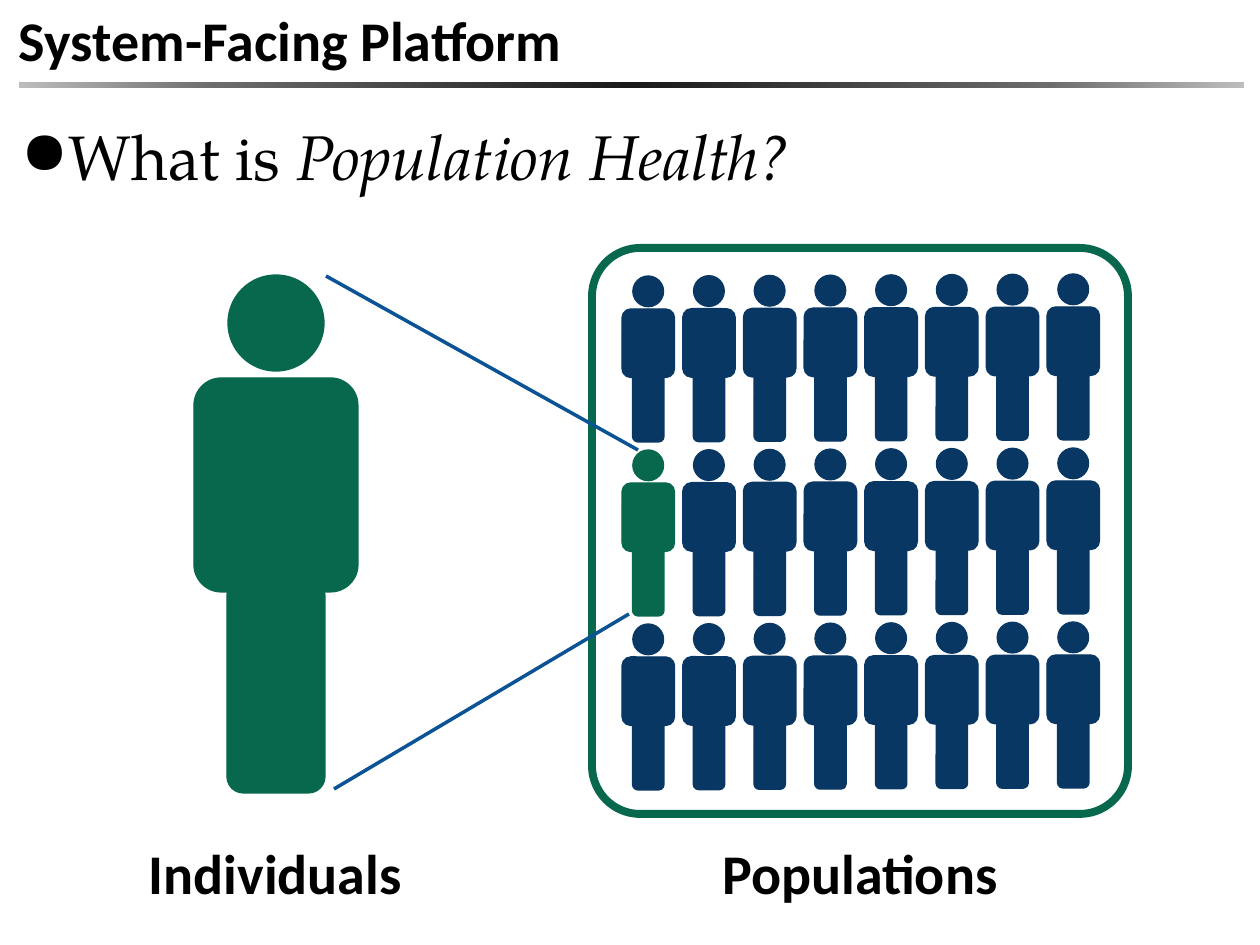
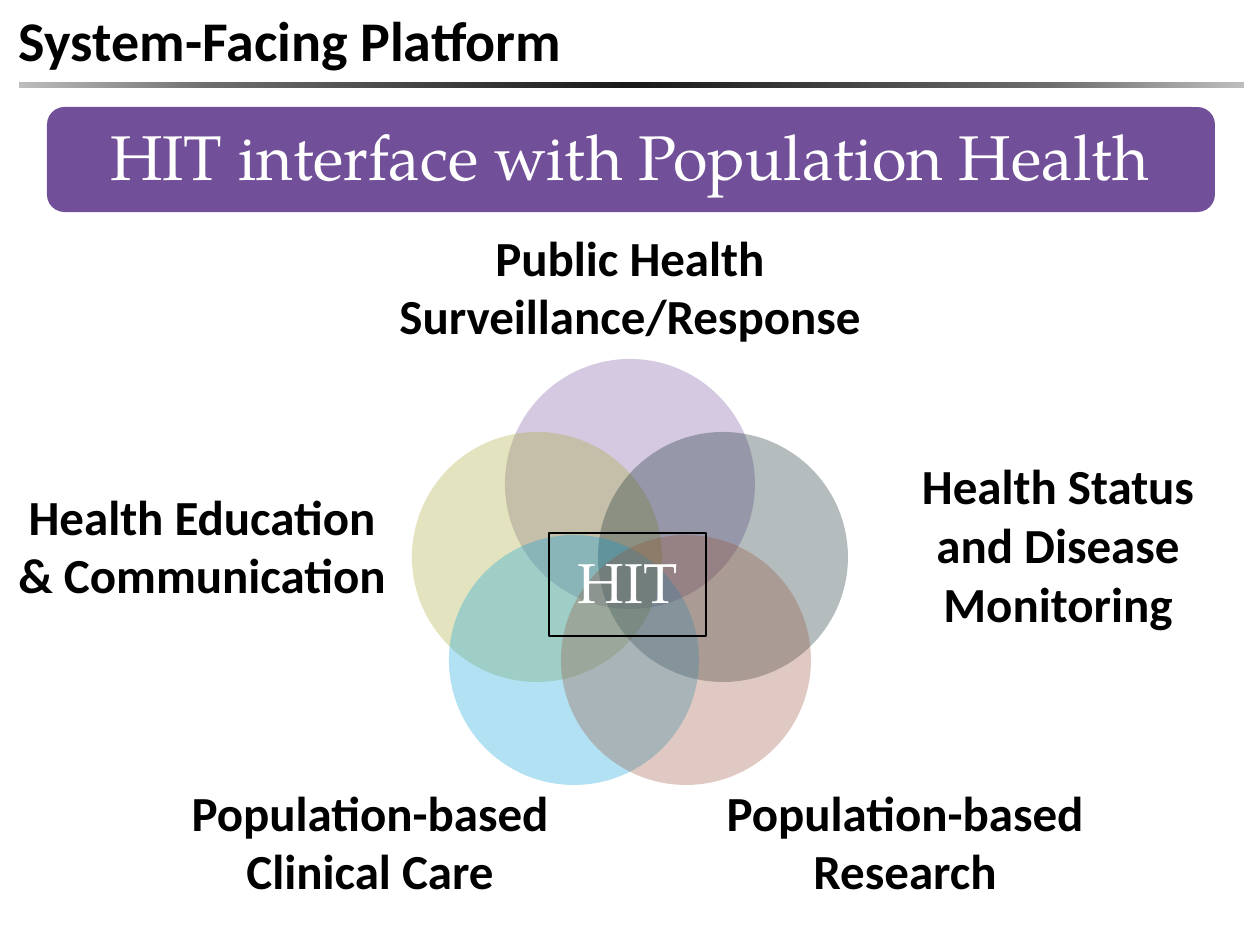
import pptx
import pptx.dml.color
import pptx.enum.shapes
import pptx.enum.text
import pptx.oxml
import pptx.oxml.ns
import pptx.util

PX = 914400 / 126
SLIDE_W, SLIDE_H = 1260, 945
SANS, SERIF = "Calibri", "TeX Gyre Pagella"
BLACK, WHITE = "000000", "FFFFFF"
GREEN, NAVY, BLUE, PURPLE = "08684E", "083763", "0B5394", "724F99"
BODY_TOP, BODY_H = 112, 728
TITLE_RULE = [(0, "191919"), (68, "6C6C6C"), (100, "BDBDBD")]

SHAPE = pptx.enum.shapes.MSO_SHAPE
ALIGN = pptx.enum.text.PP_ALIGN
ANCHOR = pptx.enum.text.MSO_ANCHOR
NS = pptx.oxml.ns.nsdecls("a")


def emu(px):
    return pptx.util.Emu(round(px * PX))


def rgb(color):
    return pptx.dml.color.RGBColor.from_string(color)


def add_xml(parent, xml):
    """Append one drawing element, given without its namespace, to parent."""
    tag, rest = xml.split(" ", 1)
    parent.append(pptx.oxml.parse_xml(f"{tag} {NS} {rest}"))


def write(tf, lines, size=28, font=SANS, color=BLACK, bold=False, align=ALIGN.CENTER,
          anchor=ANCHOR.TOP, wrap=True, insets=(13, 6, 13, 6), before=0, bullet=None):
    """Write one paragraph per line; words between asterisks are italic."""
    tf.word_wrap = wrap
    tf.vertical_anchor = anchor
    tf.margin_left, tf.margin_top, tf.margin_right, tf.margin_bottom = map(emu, insets)
    for i, line in enumerate(lines):
        p = tf.add_paragraph() if i else tf.paragraphs[0]
        p.alignment = align
        pPr = p._p.get_or_add_pPr()
        if before:
            add_xml(pPr, f'<a:spcBef ><a:spcPct val="{before * 1000}"/></a:spcBef>')
        if bullet:
            pPr.set("marL", str(emu(38)))
            pPr.set("indent", str(emu(-38)))
            add_xml(pPr, '<a:buSzPct val="95000"/>')
            add_xml(pPr, f'<a:buChar char="{bullet}"/>')
        for j, part in enumerate(line.split("*")):
            if part:
                r = p.add_run()
                r.text = part
                r.font.size = pptx.util.Pt(size)
                r.font.name = font
                r.font.bold = bold
                r.font.italic = j % 2 == 1
                r.font.color.rgb = rgb(color)


def add_text(s, box, lines, **fmt):
    tb = s.shapes.add_textbox(*map(emu, box))
    write(tb.text_frame, lines, **fmt)


def add_shape(s, kind, box, fill=None, line=None, width=0.75, alpha=None):
    sp = s.shapes.add_shape(kind, *map(emu, box))
    sp.shadow.inherit = False
    if fill:
        sp.fill.solid()
        sp.fill.fore_color.rgb = rgb(fill)
    else:
        sp.fill.background()
    if alpha:
        clr = sp._element.spPr.find(".//" + pptx.oxml.ns.qn("a:srgbClr"))
        add_xml(clr, f'<a:alpha val="{alpha * 1000}"/>')
    if line:
        sp.line.color.rgb = rgb(line)
        sp.line.width = pptx.util.Pt(width)
    else:
        sp.line.fill.background()
    return sp


def add_line(s, start, end):
    c = s.shapes.add_connector(pptx.enum.shapes.MSO_CONNECTOR.STRAIGHT,
                               *map(emu, start + end))
    c.line.color.rgb = rgb(BLUE)
    c.line.width = pptx.util.Pt(2)
    add_xml(c._element.spPr, "<a:effectLst />")


def add_header(s):
    """Title over a rule that fades from its middle to both ends."""
    sp = add_shape(s, SHAPE.RECTANGLE, (19, 82, 1225, 6), fill=BLACK)
    stops = "".join(f'<a:gs pos="{pos * 1000}"><a:srgbClr val="{c}"/></a:gs>'
                    for pos, c in TITLE_RULE)
    solid = sp._element.spPr.find(pptx.oxml.ns.qn("a:solidFill"))
    solid.getparent().replace(solid, pptx.oxml.parse_xml(
        f'<a:gradFill {NS}><a:gsLst>{stops}</a:gsLst><a:path path="circle">'
        '<a:fillToRect l="50000" t="130000" r="50000" b="-30000"/></a:path></a:gradFill>'))
    add_text(s, (19, -6, 1134, 79), ["System-Facing Platform"], size=32, bold=True,
             align=ALIGN.LEFT, anchor=ANCHOR.BOTTOM, insets=(0, 6, 0, 0))


def add_person(s, left, top, height, color):
    k = height / 518
    for kind, part in ((SHAPE.ROUNDED_RECTANGLE, (0, 103, 164, 214)),
                       (SHAPE.ROUNDED_RECTANGLE, (33, 304, 98, 214)),
                       (SHAPE.OVAL, (34, 0, 96, 96))):
        x, y, w, h = (v * k for v in part)
        add_shape(s, kind, (left + x, top + y, w, h), fill=color, line=color)


def add_caption(s, box, caption):
    add_text(s, box, [caption], size=32, bold=True, wrap=False)


def add_population(s, left, top, width, height):
    panel = add_shape(s, SHAPE.ROUNDED_RECTANGLE, (left, top, width, height),
                      line=GREEN, width=4.5)
    panel.adjustments[0] = 0.09
    cols, rows = 8, 3
    pitch_x, pitch_y, rise = 425 / (cols - 1), 174, 2 / (cols - 1)
    for row in range(rows):
        for col in range(cols):
            color = GREEN if (row, col) == (1, 0) else NAVY
            add_person(s, left + 30 + col * pitch_x,
                       top + 28 + row * pitch_y - col * rise, 166, color)
    add_caption(s, (left + 111, top + 585, 314, 81), "Populations")


def add_individual(s, left, top):
    add_person(s, left, top, 518, GREEN)
    add_caption(s, (left - 62, top + 558, 287, 81), "Individuals")


def build_population_slide(s):
    add_population(s, 592, 248, 536, 566)
    add_line(s, (334, 789), (629, 614))
    add_line(s, (326, 276), (638, 450))
    add_individual(s, 194, 275)
    add_text(s, (8, BODY_TOP, 1134, BODY_H), ["What is *Population Health?*"],
             size=36, font=SERIF, align=ALIGN.LEFT, before=20, bullet="●")
    add_header(s)


def add_venn(s, cx, cy):
    """Five overlapping circles around a framed word at (cx, cy)."""
    d = 250
    for dx, dy, color in ((0, -97, PURPLE), (-93, -24, "A5A82E"), (93, -24, "072428"),
                          (-56, 79, "009DD9"), (56, 79, "964F35")):
        add_shape(s, SHAPE.OVAL, (cx + dx - d / 2, cy + dy - d / 2, d, d),
                  fill=color, alpha=30)
    hub = add_shape(s, SHAPE.RECTANGLE, (cx - 81, cy - 48, 157, 103),
                    line=BLACK, width=1.5)
    write(hub.text_frame, ["HIT"], size=32, font=SERIF, color=WHITE,
          anchor=ANCHOR.MIDDLE, insets=(13, 0, 13, 6))


def add_banner(s, box, text):
    add_shape(s, SHAPE.ROUNDED_RECTANGLE, box, fill=PURPLE)
    add_text(s, (63, BODY_TOP, 1134, BODY_H), [text], size=36, font=SERIF,
             color=WHITE, before=20)


def build_interface_slide(s):
    add_venn(s, SLIDE_W / 2, 581)
    for box, lines in (
            ((0, 480, 404, 131), ["Health Education", "& Communication"]),
            ((171, 776, 398, 131), ["Population-based", "Clinical Care"]),
            ((680, 776, 450, 131), ["Population-based", "Research"]),
            ((856, 450, 404, 190), ["Health Status", "and Disease Monitoring"])):
        add_text(s, box, lines, bold=True)
    add_text(s, (380, 221, 500, 131), ["Public Health", "Surveillance/Response"],
             bold=True, wrap=False)
    add_banner(s, (47, 107, 1168, 105), "HIT interface with Population Health")
    add_header(s)


def main():
    prs = pptx.Presentation()
    prs.slide_width, prs.slide_height = emu(SLIDE_W), emu(SLIDE_H)
    for build in (build_population_slide, build_interface_slide):
        build(prs.slides.add_slide(prs.slide_layouts[6]))
    prs.save("out.pptx")


if __name__ == "__main__":
    main()
